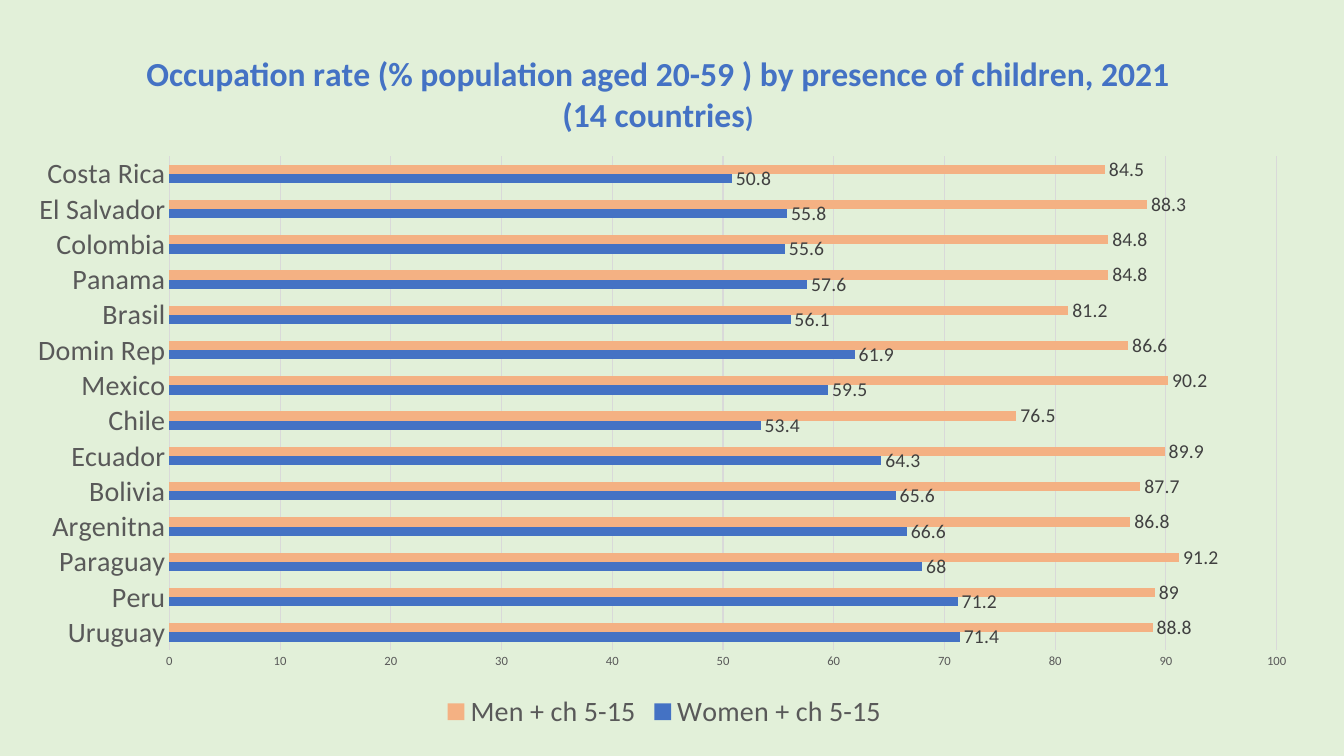
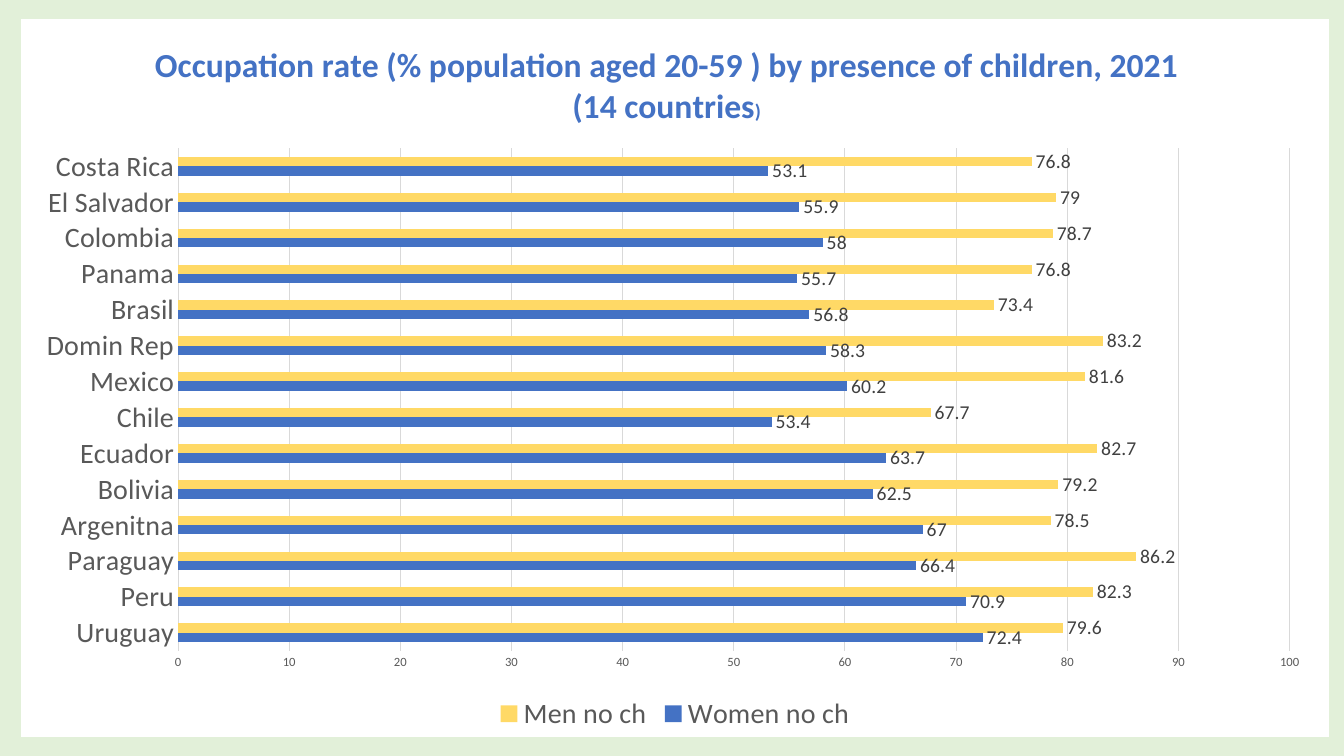
from lxml import etree
from pptx import Presentation
from pptx.chart.data import CategoryChartData
from pptx.dml.color import RGBColor
from pptx.enum.chart import XL_CHART_TYPE as CT, XL_LABEL_POSITION as LABEL
from pptx.enum.chart import XL_LEGEND_POSITION as LEGEND, XL_TICK_MARK as TICK
from pptx.oxml import parse_xml
from pptx.oxml.ns import nsdecls, qn
from pptx.util import Inches, Pt

rgb = RGBColor.from_string
FONT, BLUE, GREY, RULE, DARK = "Calibri", "4472C4", "595959", "D9D9D9", "404040"
COUNTRIES = [
    "Uruguay", "Peru", "Paraguay", "Argenitna", "Bolivia", "Ecuador", "Chile",
    "Mexico", "Domin Rep", "Brasil", "Panama", "Colombia", "El Salvador", "Costa Rica",
]
TITLE = "Occupation rate (% population aged 20-59 ) by presence of children, 2021 (14 countries"

SLIDES = [
    dict(
        box=(0.13, 0.29, 12.92, 7), paren=20, fill=None,
        series=[
            ("Women + ch 5-15", BLUE, [71.4, 71.2, 68, 66.6, 65.6, 64.3, 53.4,
                                       59.5, 61.9, 56.1, 57.6, 55.6, 55.8, 50.8]),
            ("Men + ch 5-15", "F4B183", [88.8, 89, 91.2, 86.8, 87.7, 89.9, 76.5,
                                         90.2, 86.6, 81.2, 84.8, 84.8, 88.3, 84.5]),
        ],
    ),
    dict(
        box=(0.21, 0.19, 12.97, 7.12), paren=14, fill="FFFFFF",
        series=[
            ("Women no ch", BLUE, [72.4, 70.9, 66.4, 67, 62.5, 63.7, 53.4,
                                   60.2, 58.3, 56.8, 55.7, 58, 55.9, 53.1]),
            ("Men no ch", "FFD966", [79.6, 82.3, 86.2, 78.5, 79.2, 82.7, 67.7,
                                     81.6, 83.2, 73.4, 76.8, 78.7, 79, 76.8]),
        ],
    ),
]


def add_text(p, text, size=24, color=BLUE, bold=True):
    r = p.add_run()
    r.text = text
    r.font.name, r.font.size, r.font.bold = FONT, Pt(size), bold
    r.font.color.rgb = rgb(color)


def place(parent, index, **shares):
    for old in parent.findall(qn("c:layout")):
        parent.remove(old)
    layout = parse_xml(f"<c:layout {nsdecls('c')}><c:manualLayout/></c:layout>")
    for tag, value in shares.items():
        etree.SubElement(layout[0], qn(f"c:{tag}")).set("val", str(value))
    parent.insert(index, layout)


prs = Presentation()
prs.slide_width, prs.slide_height = Inches(13.33), Inches(7.5)
bg = prs.slide_master.background.fill
bg.solid()
bg.fore_color.rgb = rgb("E2F0D9")

for page in SLIDES:
    s = prs.slides.add_slide(prs.slide_layouts[6])
    data = CategoryChartData()
    data.categories = COUNTRIES
    for name, _, values in page["series"]:
        data.add_series(name, values)
    box = [Inches(v) for v in page["box"]]
    chart = s.shapes.add_chart(CT.BAR_CLUSTERED, *box, data).chart
    chart.font.name, chart.font.size = FONT, Pt(10)

    tf = chart.chart_title.text_frame
    p = tf.paragraphs[0]
    add_text(p, TITLE)
    add_text(p, ")", size=page["paren"])
    chart.chart_title.include_in_layout = False

    chart.has_legend = True
    chart.legend.position = LEGEND.BOTTOM
    chart.legend.include_in_layout = False

    plot = chart.plots[0]
    plot.gap_width, plot.overlap, plot.vary_by_categories = 182, 0, False
    fonts = [(chart.legend.font, 20, GREY)]
    for ser, (_, color, _) in zip(plot.series, page["series"]):
        ser.format.fill.solid()
        ser.format.fill.fore_color.rgb = rgb(color)
        labels = ser.data_labels
        labels.show_value, labels.position = True, LABEL.OUTSIDE_END
        fonts.append((labels.font, 14, DARK))

    cat, val = chart.category_axis, chart.value_axis
    for axis, size in ((cat, 20), (val, 9)):
        axis.major_tick_mark = axis.minor_tick_mark = TICK.NONE
        fonts.append((axis.tick_labels.font, size, GREY))
    val.minimum_scale, val.maximum_scale, val.major_unit = 0, 100, 10
    val.has_major_gridlines = True
    val.format.line.fill.background()
    for line in (cat.format.line, val.major_gridlines.format.line):
        line.width = Pt(0.75)
        line.color.rgb = rgb(RULE)
    for font, size, color in fonts:
        font.name, font.size = FONT, Pt(size)
        font.color.rgb = rgb(color)

    root = chart.font._element.getparent().getparent().getparent().getparent()
    root = root if root.tag == qn("c:chartSpace") else chart.element
    body = root.find(qn("c:chart"))
    place(body.find(qn("c:title")), 1, xMode="edge", yMode="edge", x=0.1, y=0.03)
    place(body.find(qn("c:plotArea")), 0, layoutTarget="inner", xMode="edge",
          yMode="edge", x=0.12, y=0.18, w=0.85, h=0.7)
    fill = page["fill"]
    paint = f'<a:solidFill><a:srgbClr val="{fill}"/></a:solidFill>' if fill else "<a:noFill/>"
    body.addnext(parse_xml(
        f"<c:spPr {nsdecls('c', 'a')}>{paint}<a:ln><a:noFill/></a:ln></c:spPr>"))

prs.save("out.pptx")
